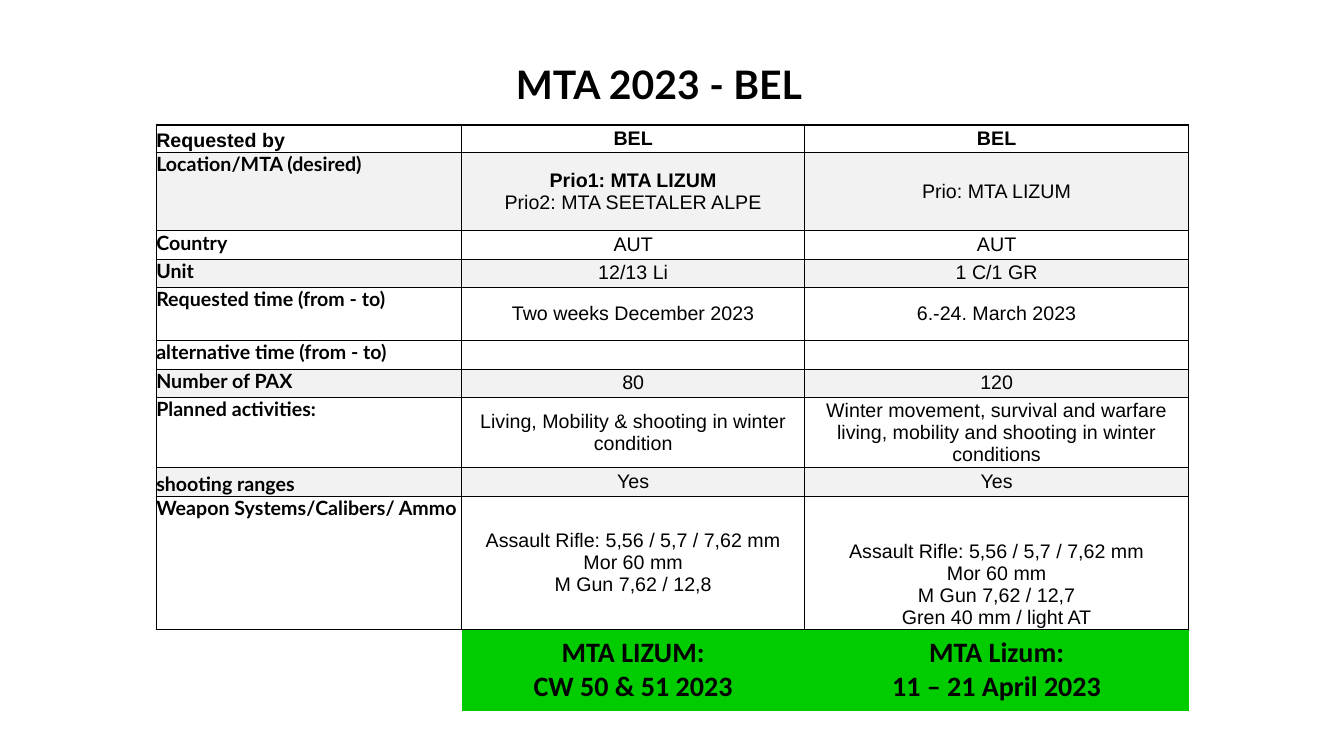
from lxml.etree import SubElement
from pptx import Presentation
from pptx.dml.color import RGBColor
from pptx.enum.text import MSO_ANCHOR, PP_ALIGN
from pptx.oxml.ns import qn
from pptx.util import Inches, Pt

BLACK = RGBColor(0x00, 0x00, 0x00)
WHITE = RGBColor(0xFF, 0xFF, 0xFF)
GREY = RGBColor(0xF2, 0xF2, 0xF2)
GREEN = RGBColor(0x00, 0xCC, 0x00)
NO_STYLE = "{2D5ABB26-0587-4C30-8999-92F81FD0307C}"


def add_text(p, text, font="Arial", size=14, bold=False, align=PP_ALIGN.CENTER):
    p.alignment = align
    for i, line in enumerate(text.split("\n")):
        if i:
            p.add_line_break()
        r = p.add_run()
        r.text = line
        r.font.name = font
        r.font.size = Pt(size)
        r.font.bold = bold or line.startswith("Prio1")
        r.font.color.rgb = BLACK


def add_border(cell, side, width):
    ln = SubElement(cell._tc.get_or_add_tcPr(), qn(f"a:ln{side}"), w=str(Pt(width)))
    if width:
        fill = SubElement(ln, qn("a:solidFill"))
        SubElement(fill, qn("a:srgbClr"), val=str(BLACK))
    else:
        SubElement(ln, qn("a:noFill"))


prs = Presentation()
prs.slide_width = Inches(13.33)
prs.slide_height = Inches(7.5)
s = prs.slides.add_slide(prs.slide_layouts[6])

title = s.shapes.add_textbox(Inches(1.68), Inches(0.44), Inches(9.71), Inches(0.79))
tf = title.text_frame
tf.word_wrap = True
tf.vertical_anchor = MSO_ANCHOR.MIDDLE
add_text(tf.paragraphs[0], "MTA 2023 - BEL", font="Lato", size=28, bold=True)

requests = [
    (0.27, WHITE, "Requested by", "BEL", "BEL"),
    (0.78, GREY, "Location/MTA (desired)", "Prio1: MTA LIZUM\nPrio2: MTA SEETALER ALPE",
     "Prio: MTA LIZUM"),
    (0.28, WHITE, "Country", "AUT", "AUT"),
    (0.28, GREY, "Unit", "12/13 Li", "1 C/1 GR"),
    (0.53, WHITE, "Requested time (from - to)", "Two weeks December 2023", "6.-24. March 2023"),
    (0.28, WHITE, "alternative time (from - to)", "", ""),
    (0.28, GREY, "Number of PAX", "80", "120"),
    (0.68, WHITE, "Planned activities:", "Living, Mobility & shooting in winter condition",
     "Winter movement, survival and warfare living, mobility and shooting in winter conditions"),
    (0.28, GREY, "shooting ranges", "Yes", "Yes"),
    (1.32, WHITE, "Weapon Systems/Calibers/ Ammo",
     "Assault Rifle: 5,56 / 5,7 / 7,62 mm\nMor 60 mm\nM Gun 7,62 / 12,8",
     "Assault Rifle: 5,56 / 5,7 / 7,62 mm\nMor 60 mm\nM Gun 7,62 / 12,7\nGren 40 mm / light AT"),
    (0.81, GREEN, "", "MTA LIZUM:\nCW 50 & 51 2023", "MTA Lizum:\n11 – 21 April 2023"),
]
column_widths = [3.03, 3.4, 3.81]
result_row = len(requests) - 1
bottom_cells = [(0, 0), (8, 0), (9, 2)]

table = s.shapes.add_table(
    len(requests), len(column_widths), Inches(1.55), Inches(1.24),
    Inches(sum(column_widths)), Inches(sum(row[0] for row in requests))).table
table.first_row = False
table.horz_banding = False
table._tbl.tblPr.find(qn("a:tableStyleId")).text = NO_STYLE
for column, width in zip(table.columns, column_widths):
    column.width = Inches(width)

for i, (height, color, *texts) in enumerate(requests):
    table.rows[i].height = Inches(height)
    for j, text in enumerate(texts):
        cell = table.cell(i, j)
        cell.margin_left = cell.margin_right = cell.margin_top = cell.margin_bottom = 0
        if (i, j) in bottom_cells:
            cell.vertical_anchor = MSO_ANCHOR.BOTTOM
        else:
            cell.vertical_anchor = MSO_ANCHOR.MIDDLE if j else MSO_ANCHOR.TOP

        is_result = i == result_row
        add_border(cell, "L", 0 if is_result else 0.5 if j else 1)
        add_border(cell, "R", 0 if is_result else 1 if j == 2 else 0.5)
        add_border(cell, "T", 1 if i < 2 else 0.5)
        add_border(cell, "B", 0 if is_result else 1 if i == 0 else 0.5)
        if is_result and j == 0:
            cell.fill.background()
        else:
            cell.fill.solid()
            cell.fill.fore_color.rgb = color

        p = cell.text_frame.paragraphs[0]
        if not text:
            p._p.get_or_add_endParaRPr().set("sz", "1400")
        elif is_result:
            for k, line in enumerate(text.split("\n")):
                if k:
                    p = cell.text_frame.add_paragraph()
                add_text(p, line, font="Calibri", size=20, bold=True)
        elif j == 0:
            add_text(p, text, font="Lato" if i else "Arial", bold=True, align=PP_ALIGN.LEFT)
        else:
            add_text(p, text, bold=i == 0)

prs.save("out.pptx")
